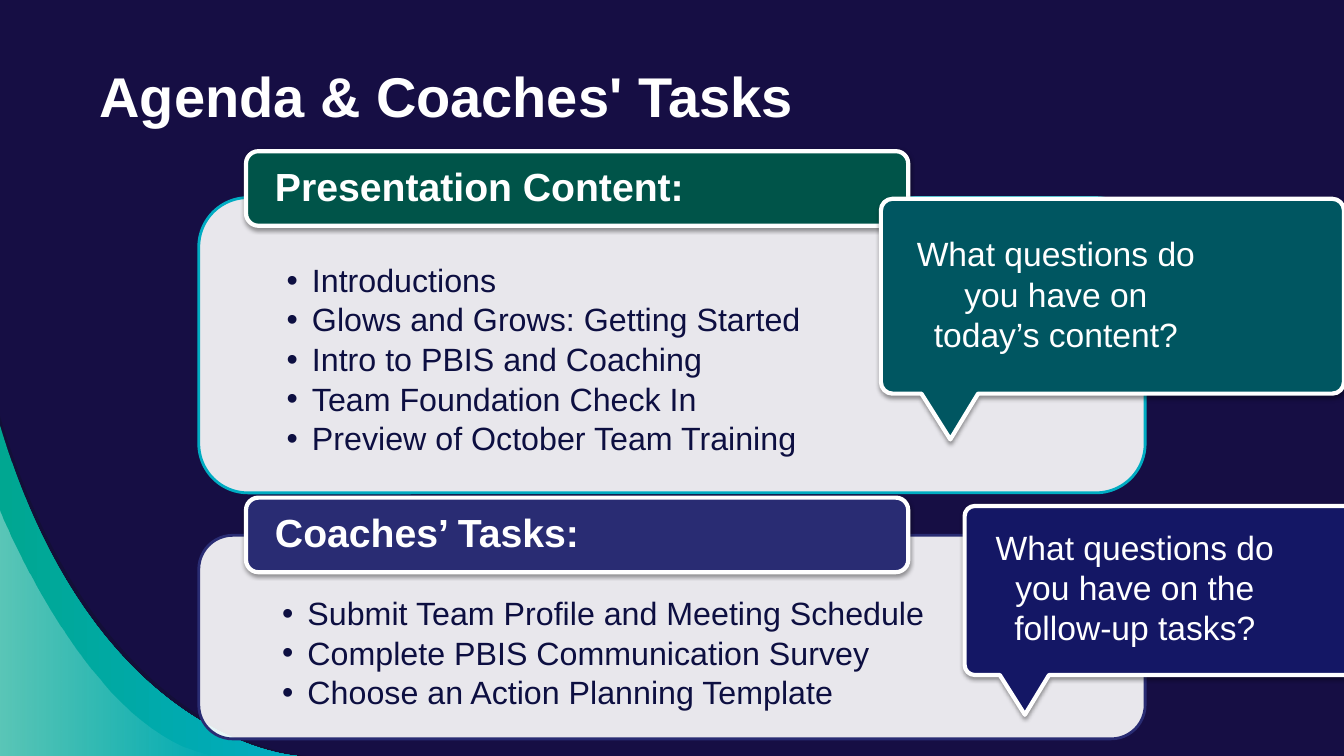
from dataclasses import dataclass

from lxml import etree
from pptx import Presentation
from pptx.dml.color import RGBColor
from pptx.enum.shapes import MSO_SHAPE
from pptx.enum.text import MSO_ANCHOR, PP_ALIGN
from pptx.oxml.ns import qn
from pptx.util import Cm, Pt

ROUND = MSO_SHAPE.ROUNDED_RECTANGLE
TOP, MIDDLE = MSO_ANCHOR.TOP, MSO_ANCHOR.MIDDLE
LEFT, CENTER = PP_ALIGN.LEFT, PP_ALIGN.CENTER
FONT = "Arial"
WIDTH, HEIGHT = 33.87, 19.05
COLORS = {
    "night": "160E44", "shade": "12102F", "cyan": "00ACC2", "mint": "00A791",
    "white": "FFFFFF", "ink": "0D0F41", "green": "005449", "indigo": "292C73",
    "teal": "005661", "navy": "141765", "black": "000000",
}
Point = tuple[float, float]
Segment = list[Point]  # one point for a line, three for a Bezier curve


@dataclass
class Wave:
    """Corner curve: its start, its Bezier points, (colour, opacity) stops."""
    start: Point
    curve: Segment
    stops: list[tuple[str, int]]


@dataclass
class Panel:
    top: float
    height: float
    edge: str
    label_top: float
    label_fill: str
    label: str
    items: list[str]


@dataclass
class Callout:
    left: float
    top: float
    width: float
    height: float
    fill: str
    text_left: float
    text_top: float
    text: str


WAVES = [
    Wave((0, 10.49), [(2.49, 18.77), (7.7, 19.05), (7.7, 19.05)], [("shade", 54)]),
    Wave((0, 10.72), [(2.41, 18.77), (7.49, 19.05), (7.49, 19.05)],
         [("mint", 100), ("cyan", 100)]),
    Wave((0, 12.85), [(0, 12.85), (2.31, 18.67), (5.49, 19.05)],
         [("white", 36), ("white", 0)]),
]
PANELS = [
    Panel(4.98, 7.44, "cyan", 3.81, "green", "Presentation Content:",
          ["Introductions", "Glows and Grows: Getting Started",
           "Intro to PBIS and Coaching", "Team Foundation Check In",
           "Preview of October Team Training"]),
    Panel(13.49, 5.13, "indigo", 12.54, "indigo", "Coaches’ Tasks:",
          ["Submit Team Profile and Meeting Schedule",
           "Complete PBIS Communication Survey",
           "Choose an Action Planning Template"]),
]
CALLOUTS = [
    Callout(22.2, 5.01, 11.67, 4.91, "teal", 22.75, 5.74,
            "What questions do you have on today’s content?"),
    Callout(24.31, 12.75, 10.13, 4.26, "navy", 24.74, 13.13,
            "What questions do you have on the follow-up tasks?"),
]


def rgb(name: str) -> RGBColor:
    return RGBColor.from_string(COLORS[name])


def fade(shape, levels: list[int]) -> None:
    """Set the opacity, in percent, of each fill colour in turn."""
    for color, level in zip(shape.element.spPr.iter(qn("a:srgbClr")), levels):
        etree.SubElement(color, qn("a:alpha"), val=str(level * 1000))


def paint(shape, fill: str, edge: str, points: float) -> None:
    shape.shadow.inherit = False
    shape.fill.solid()
    shape.fill.fore_color.rgb = rgb(fill)
    shape.line.color.rgb = rgb(edge)
    shape.line.width = Pt(points)


def add_shadow(shape) -> None:
    effects = shape.element.spPr.find(qn("a:effectLst"))
    outer = etree.SubElement(effects, qn("a:outerShdw"), blurRad=str(Pt(3.1)),
                             dist=str(Pt(1.6)), dir="5400000", rotWithShape="0")
    color = etree.SubElement(outer, qn("a:srgbClr"), val=COLORS["black"])
    etree.SubElement(color, qn("a:alpha"), val="38000")


def write(shape, lines: list[str], size: float, color: str, bold: bool = False,
          align=LEFT, anchor=MIDDLE, insets=(0.25, 0.13, 0.25, 0.13),
          spacing: float = 1, after: float = 0):
    """Fill a shape with paragraphs; insets run left, top, right, bottom."""
    frame = shape.text_frame
    frame.word_wrap = True
    frame.vertical_anchor = anchor
    (frame.margin_left, frame.margin_top,
     frame.margin_right, frame.margin_bottom) = map(Cm, insets)
    frame.text = "\n".join(lines)
    for para in frame.paragraphs:
        para.alignment = align
        para.line_spacing = spacing
        para.space_after = Pt(after)
        for run in para.runs:
            run.font.name = FONT
            run.font.size = Pt(size)
            run.font.bold = bold
            run.font.color.rgb = rgb(color)
    return frame


def outline(shapes, start: Point, segments: list[Segment]):
    """Draw a closed outline of lines and curves."""
    builder = shapes.build_freeform(Cm(start[0]), Cm(start[1]))
    builder.add_line_segments([(Cm(x), Cm(y)) for seg in segments for x, y in seg])
    shape = builder.convert_to_shape()
    lines = iter(list(shape.element.spPr.iter(qn("a:lnTo"))))
    for segment in segments:
        group = [next(lines) for _ in segment]
        if len(group) == 3:
            curve = etree.Element(qn("a:cubicBezTo"))
            group[0].addprevious(curve)
            for line in group:
                curve.append(line[0])
                line.getparent().remove(line)
    return shape


def bend(start: Point, corner: Point, end: Point) -> Segment:
    """Quarter circle that rounds off a corner."""
    near = [(p[0] + 0.55 * (corner[0] - p[0]), p[1] + 0.55 * (corner[1] - p[1]))
            for p in (start, end)]
    return near + [end]


def draw_wave(shapes, wave: Wave) -> None:
    shape = outline(shapes, wave.start, [wave.curve, [(0, HEIGHT)]])
    shape.shadow.inherit = False
    shape.line.fill.background()
    if len(wave.stops) == 1:
        shape.fill.solid()
        shape.fill.fore_color.rgb = rgb(wave.stops[0][0])
    else:
        shape.fill.gradient()
        shape.fill.gradient_angle = 0
        for stop, (name, _) in zip(shape.fill.gradient_stops, wave.stops):
            stop.color.rgb = rgb(name)
    fade(shape, [level for _, level in wave.stops])


def draw_panel(shapes, panel: Panel) -> None:
    body = shapes.add_shape(ROUND, Cm(5.01), Cm(panel.top), Cm(23.85), Cm(panel.height))
    paint(body, "white", panel.edge, 2)
    fade(body, [90])
    frame = write(body, panel.items, 23, "ink", anchor=TOP,
                  insets=(1.85, 1.32, 1.85, 0.46), spacing=0.9, after=3.5)
    for para in frame.paragraphs:
        props = para._p.get_or_add_pPr()
        props.set("marL", str(Cm(0.64)))
        props.set("indent", str(-Cm(0.64)))
        etree.SubElement(props, qn("a:buFont"), typeface=FONT)
        etree.SubElement(props, qn("a:buChar"), char="•")

    label = shapes.add_shape(ROUND, Cm(6.2), Cm(panel.label_top), Cm(16.69), Cm(1.88))
    paint(label, panel.label_fill, "white", 3)
    add_shadow(label)
    write(label, [panel.label], 28, "white", bold=True,
          insets=(0.64, 0, 0.64, 0), spacing=0.9)


def draw_callout(shapes, note: Callout) -> None:
    left, top, width = note.left, note.top, note.width
    right, base = left + width, top + note.height
    edge = 0.06 * note.height
    start = (right - edge, top)
    shape = outline(shapes, start, [
        bend(start, (right, top), (right, top + edge)),
        [(right, base - edge)],
        bend((right, base - edge), (right, base), (right - edge, base)),
        [(left + 0.21 * width, base)],
        [(left + 0.15 * width, base + 0.235 * note.height)],
        [(left + 0.0875 * width, base)],
        [(left + edge, base)],
        bend((left + edge, base), (left, base), (left, base - edge)),
        [(left, top + edge)],
        bend((left, top + edge), (left, top), (left + edge, top)),
    ])
    paint(shape, note.fill, "white", 3)
    add_shadow(shape)
    box = shapes.add_textbox(Cm(note.text_left), Cm(note.text_top), Cm(7.72), Cm(3.33))
    write(box, [note.text], 24, "white", align=CENTER)


def main() -> None:
    deck = Presentation()
    deck.slide_width, deck.slide_height = Cm(WIDTH), Cm(HEIGHT)
    slide = deck.slides.add_slide(deck.slide_layouts[6])
    slide.background.fill.solid()
    slide.background.fill.fore_color.rgb = rgb("night")
    shapes = slide.shapes
    for wave in WAVES:
        draw_wave(shapes, wave)
    for panel in PANELS:
        draw_panel(shapes, panel)
    title = shapes.add_textbox(Cm(2.26), Cm(1.3), Cm(26.06), Cm(2.34))
    write(title, ["Agenda & Coaches' Tasks"], 40, "white", bold=True,
          insets=(0.25, 0.13, 0.25, 0.28))
    for note in CALLOUTS:
        draw_callout(shapes, note)
    deck.save("out.pptx")


if __name__ == "__main__":
    main()
